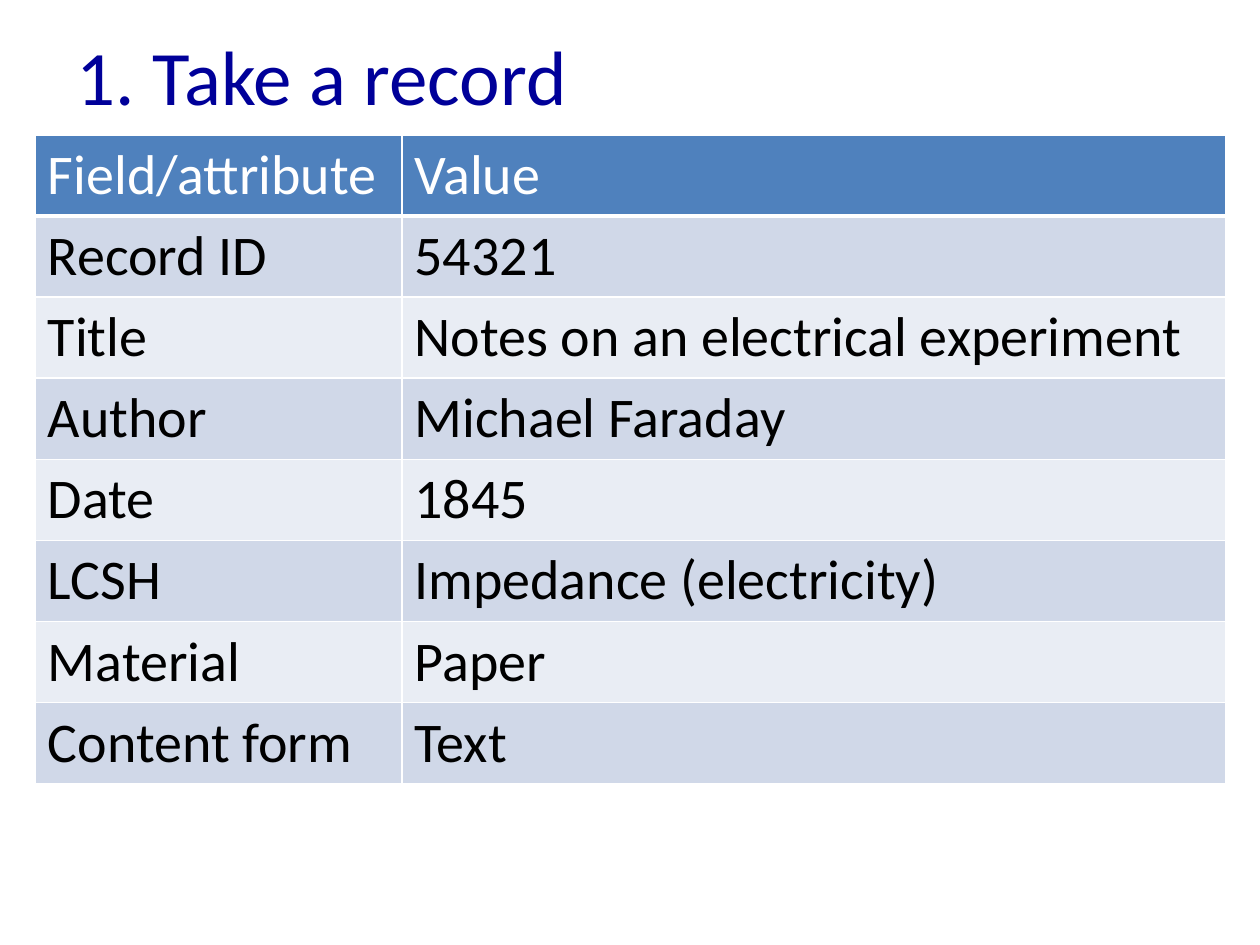
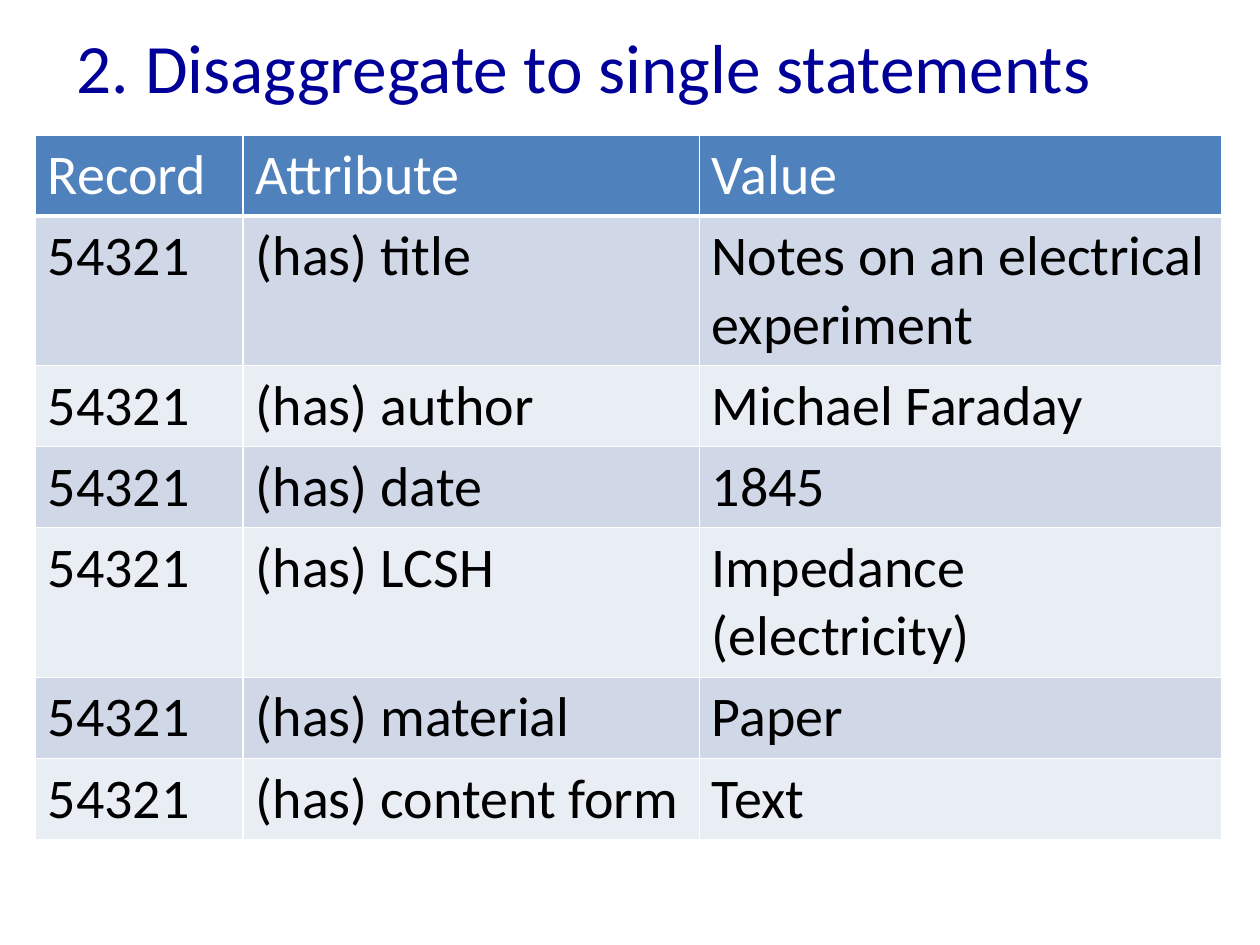
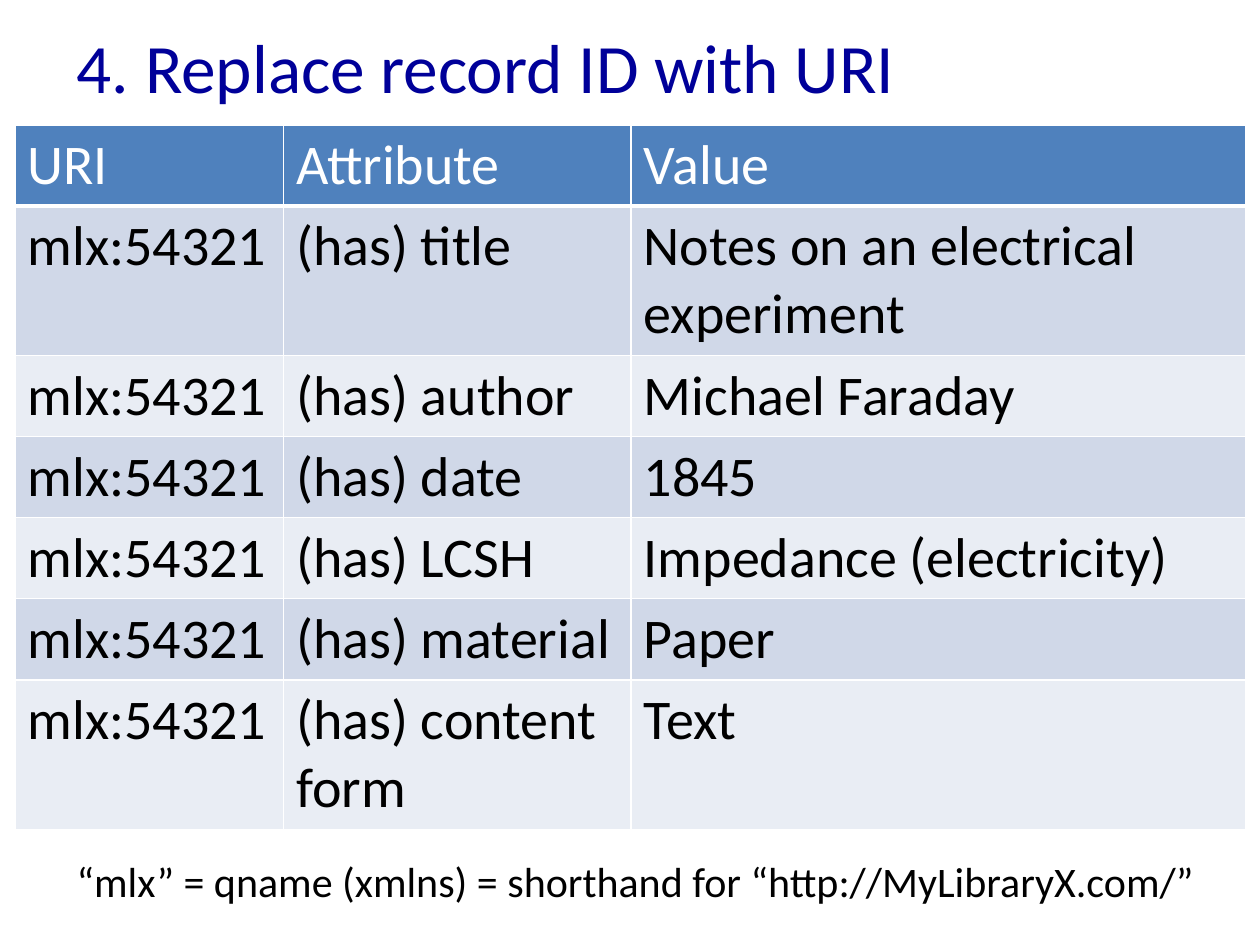
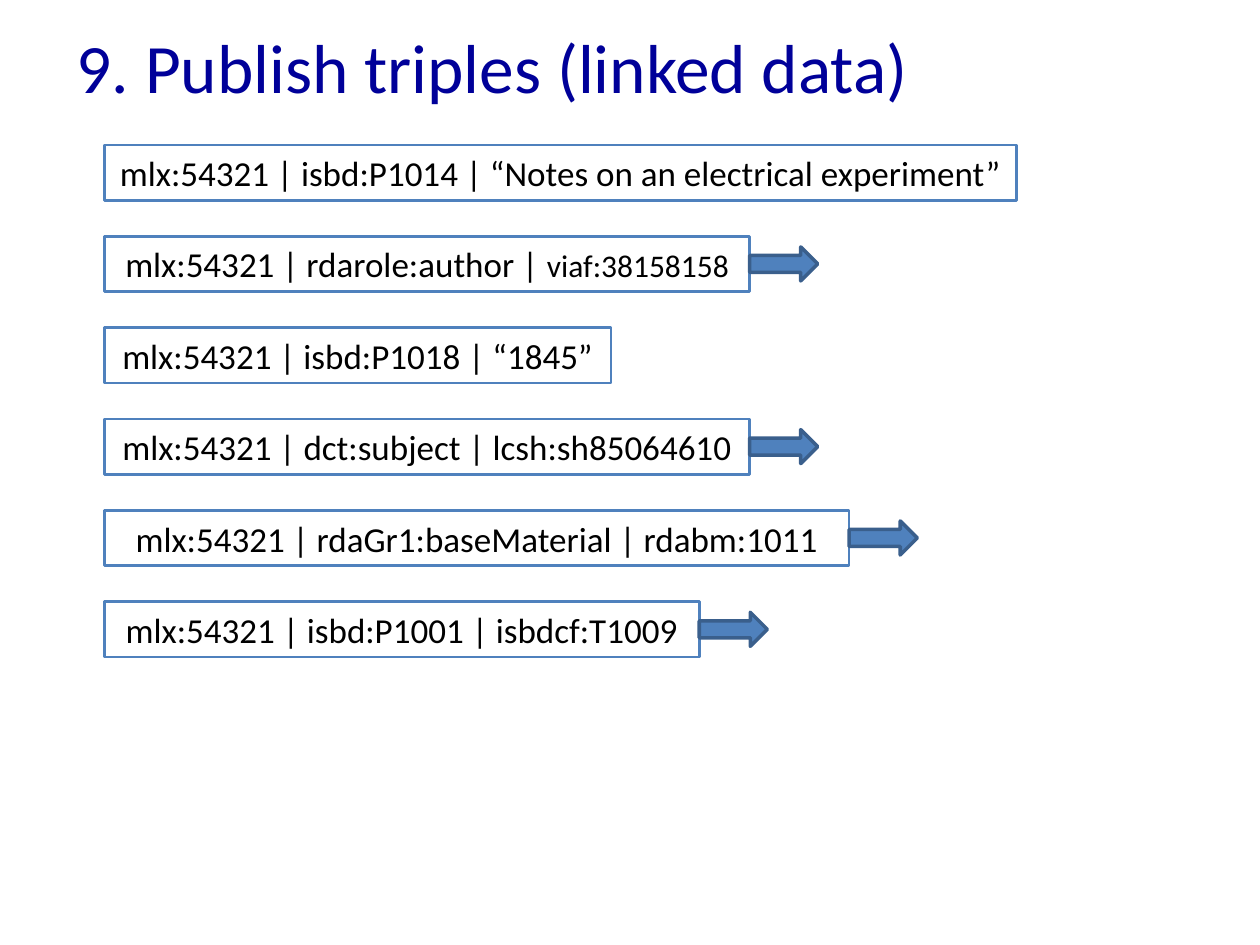
from collections import namedtuple
from lxml.etree import SubElement
from pptx import Presentation
from pptx.dml.color import RGBColor
from pptx.enum.shapes import MSO_SHAPE
from pptx.enum.text import MSO_ANCHOR, MSO_AUTO_SIZE, PP_ALIGN
from pptx.oxml.ns import qn
from pptx.util import Inches, Pt

Box = namedtuple("Box", "x y w h")

COLS, ROWS = 100, 75
WIDE, HIGH = Inches(10), Inches(7.5)
NAVY, BLUE, EDGE = "000099", "4F81BD", "3A5F8C"
BLACK, WHITE = "000000", "FFFFFF"
BANDS = ("D0D8E8", "E9EDF4")

ITEMS = [
    ("title", "Notes on an electrical experiment"),
    ("author", "Michael Faraday"),
    ("date", "1845"),
    ("LCSH", "Impedance (electricity)"),
    ("material", "Paper"),
    ("content form", "Text"),
]

TRIPLES = [
    ([("mlx:54321 | isbd:P1014 | “Notes on an electrical experiment”", 20)], 72.4, False),
    ([("mlx:54321 | rdarole:author | ", 20), ("viaf:38158158", 18)], 51.2, True),
    ([("mlx:54321 | isbd:P1018 | “1845”", 20)], 40.2, False),
    ([("mlx:54321 | dct:subject | lcsh:sh85064610", 20)], 51.2, True),
    ([("mlx:54321 | rdaGr1:baseMaterial | rdabm:1011", 20)], 59.1, True),
    ([("mlx:54321 | isbd:P1001 | isbdcf:T1009", 20)], 47.2, True),
]


def tint(code):
    return RGBColor.from_string(code)


def across(n):
    return int(WIDE * n / COLS)


def down(n):
    return int(HIGH * n / ROWS)


def place(box):
    return across(box.x), down(box.y), across(box.w), down(box.h)


def apply(thing, style):
    for name, value in style.items():
        setattr(thing, name, value)


def write(para, text, size, color):
    run = para.add_run()
    run.text = text
    apply(run.font, {"name": "Calibri", "size": Pt(size), "bold": False})
    run.font.color.rgb = tint(color)


def start(deck, text, size=39.6, high=7.9):
    slide = deck.slides.add_slide(deck.slide_layouts[5])
    title = slide.shapes.title
    spot = place(Box(5.1, 1.3, 90, high))
    apply(title, dict(zip(("left", "top", "width", "height"), spot)))
    frame = title.text_frame
    apply(frame, {"vertical_anchor": MSO_ANCHOR.MIDDLE, "word_wrap": True,
                  "auto_size": MSO_AUTO_SIZE.NONE})
    frame.paragraphs[0].alignment = PP_ALIGN.LEFT
    write(frame.paragraphs[0], text, size, NAVY)
    return slide


def border(cell, head):
    props = cell._tc.get_or_add_tcPr()
    for side in "LRTB":
        width = 3 if head and side == "B" else 1
        line = SubElement(props, qn("a:ln" + side), w=str(Pt(width)))
        fill = SubElement(line, qn("a:solidFill"))
        SubElement(fill, qn("a:srgbClr"), val=WHITE)


def grid(slide, box, widths, high, data):
    frame = slide.shapes.add_table(len(data), len(widths), *place(box))
    table = frame.table
    for col, width in zip(table.columns, widths):
        col.width = across(width)
    for r, line in enumerate(data):
        table.rows[r].height = down(high)
        for c, text in enumerate(line):
            cell = table.cell(r, c)
            border(cell, r == 0)
            cell.fill.solid()
            cell.fill.fore_color.rgb = tint(BANDS[(r - 1) % 2] if r else BLUE)
            write(cell.text_frame.paragraphs[0], text, 32, BLACK if r else WHITE)
    frame.height = down(box.h)


def claims(head, key):
    return [(head, "Attribute", "Value")] + [
        (key, f"(has) {name}", value) for name, value in ITEMS]


def note(slide, box, text):
    frame = slide.shapes.add_textbox(*place(box)).text_frame
    apply(frame, {"word_wrap": False, "auto_size": MSO_AUTO_SIZE.SHAPE_TO_FIT_TEXT})
    write(frame.paragraphs[0], text, 24, BLACK)


def draw(slide, kind, box, color, width):
    shape = slide.shapes.add_shape(kind, *place(box))
    shape.shadow.inherit = False
    shape.line.color.rgb = tint(color)
    shape.line.width = Pt(width)
    return shape


def triple(slide, box, parts, arrow):
    shape = draw(slide, MSO_SHAPE.RECTANGLE, box, BLUE, 1.5)
    shape.fill.background()
    frame = shape.text_frame
    apply(frame, {"word_wrap": True, "auto_size": MSO_AUTO_SIZE.SHAPE_TO_FIT_TEXT})
    para = frame.paragraphs[0]
    para.alignment = PP_ALIGN.CENTER
    for text, size in parts:
        write(para, text, size, BLACK)
    if arrow:
        high = 2.7
        spot = Box(box.x + box.w, box.y + (box.h - high) / 2, 5.4, high)
        point = draw(slide, MSO_SHAPE.RIGHT_ARROW, spot, EDGE, 2)
        point.fill.solid()
        point.fill.fore_color.rgb = tint(BLUE)


def stack(slide, box, step):
    for i, (parts, width, arrow) in enumerate(TRIPLES):
        triple(slide, Box(box.x, box.y + i * step, width, box.h), parts, arrow)


def main():
    deck = Presentation()
    apply(deck, {"slide_width": WIDE, "slide_height": HIGH})

    slide = start(deck, "1. Take a record", 44, 9.3)
    data = [("Field/attribute", "Value"), ("Record ID", "54321")]
    data += [(name[0].upper() + name[1:], value) for name, value in ITEMS]
    grid(slide, Box(2.8, 10.7, 94.5, 50.7), (29.1, 65.4), 5.5, data)

    slide = start(deck, "2. Disaggregate to single statements")
    grid(slide, Box(2.8, 10.7, 94.2, 55), (16.5, 36.2, 41.5), 4.1,
         claims("Record", "54321"))

    slide = start(deck, "4. Replace record ID with URI")
    grid(slide, Box(1.2, 9.9, 97.6, 55), (21.3, 27.6, 48.8), 4.1,
         claims("URI", "mlx:54321"))
    note(slide, Box(5.1, 67.4, 92.3, 5),
         "“mlx” = qname (xmlns) = shorthand for “http://MyLibraryX.com/”")

    slide = start(deck, "9. Publish triples (linked data)")
    stack(slide, Box(8.3, 11.5, 72.4, 4.4), 7.25)

    deck.save("out.pptx")


if __name__ == "__main__":
    main()
